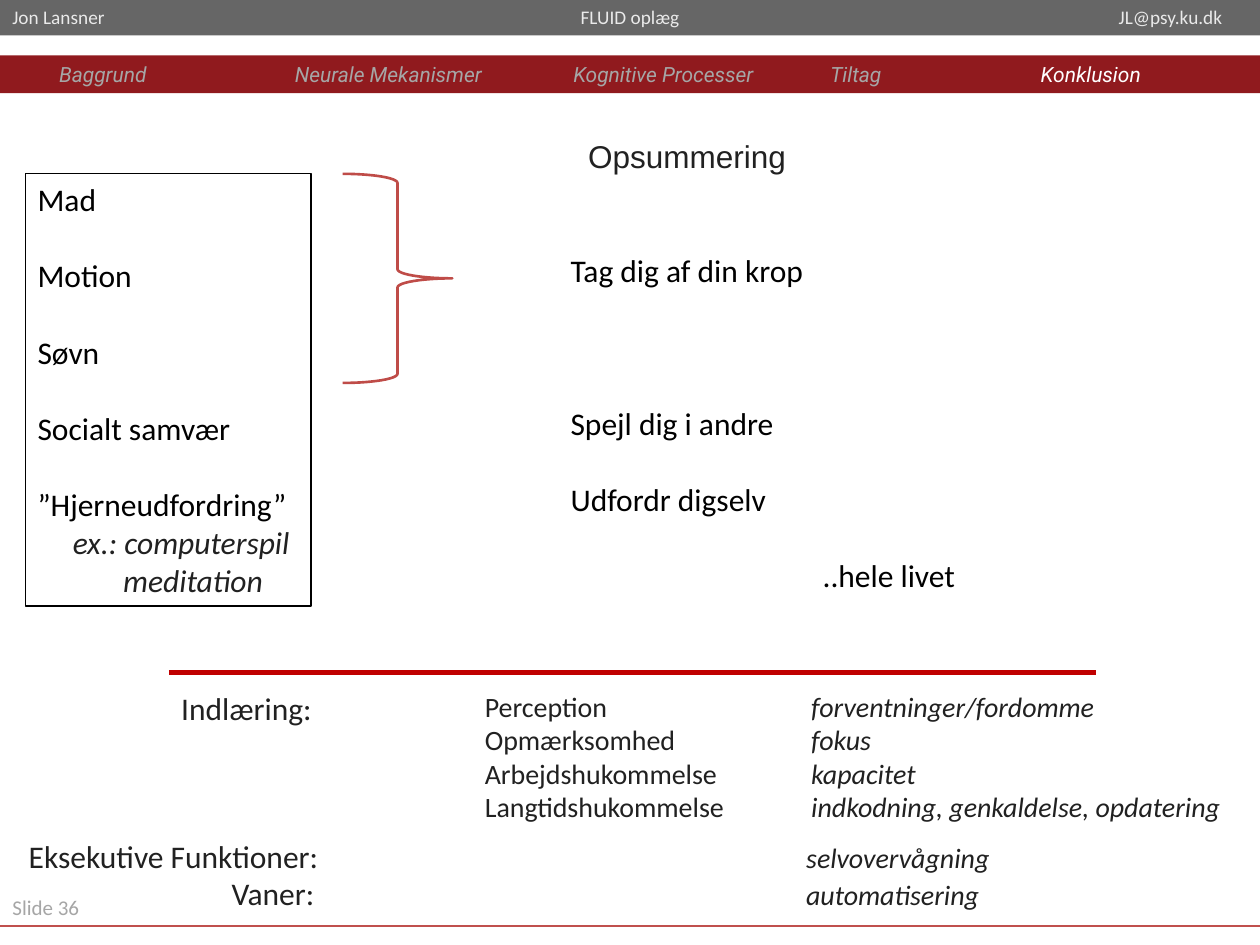
"""Build the summary slide of a lecture on learning and habits."""
from dataclasses import dataclass

from lxml.etree import SubElement
from pptx import Presentation
from pptx.dml.color import RGBColor
from pptx.enum.shapes import MSO_CONNECTOR, MSO_SHAPE
from pptx.enum.text import MSO_ANCHOR, PP_ALIGN
from pptx.oxml.ns import qn
from pptx.util import Inches, Pt

BLACK = RGBColor(0x00, 0x00, 0x00)
WHITE = RGBColor(0xFF, 0xFF, 0xFF)
INK = RGBColor(0x21, 0x21, 0x21)
HEADER_GRAY = RGBColor(0x66, 0x66, 0x66)
HEADER_TEXT = RGBColor(0xEA, 0xEA, 0xEA)
MUTED = RGBColor(0xA6, 0xA6, 0xA6)
NAVIGATION_RED = RGBColor(0x90, 0x1A, 0x1E)
FOOTER_RED = RGBColor(0xC0, 0x50, 0x4D)
DIVIDER_RED = RGBColor(0xC0, 0x00, 0x00)
BRACE_RED = RGBColor(0xBF, 0x4C, 0x48)
BLANK_LINE = 22


@dataclass
class Style:
    """Font settings shared by the paragraphs of a box."""
    size: int
    color: RGBColor = INK
    name: str = "Calibri"
    italic: bool = False


@dataclass
class Line:
    """One paragraph: its runs, indent, space before and tab stops."""
    runs: list
    indent: float = 0
    before: float = 0
    stops: tuple = ()
    style: Style = None


def apply_style(font, style):
    """Copy a style to a font."""
    font.size = Pt(style.size)
    font.name = style.name
    font.italic = style.italic
    font.color.rgb = style.color


def write_line(paragraph, line, style):
    """Fill a paragraph; a run is a text or a (text, style) pair."""
    paragraph.alignment = PP_ALIGN.LEFT
    properties = paragraph._p.get_or_add_pPr()
    if line.indent:
        properties.set("marL", str(Inches(line.indent)))
        properties.set("indent", "0")
    if line.stops:
        tabs = SubElement(properties, qn("a:tabLst"))
        for stop in line.stops:
            SubElement(tabs, qn("a:tab"), pos=str(Inches(stop)), algn="l")
    if line.before:
        paragraph.space_before = Pt(line.before)
    apply_style(paragraph.font, line.style or style)
    for item in line.runs:
        text, run_style = (item, None) if isinstance(item, str) else item
        run = paragraph.add_run()
        run.text = text
        if run_style:
            apply_style(run.font, run_style)


def write_lines(shape, lines, style, wrap=True):
    """Write lines into a shape; a plain string is a simple line."""
    frame = shape.text_frame
    frame.word_wrap = wrap
    for index, line in enumerate(lines):
        paragraph = frame.add_paragraph() if index else frame.paragraphs[0]
        write_line(paragraph, Line([line]) if isinstance(line, str) else line, style)


def add_text(slide, box, lines, style, wrap=True):
    """Add a text box."""
    shape = slide.shapes.add_textbox(*map(Inches, box))
    write_lines(shape, lines, style, wrap)


def add_outline(slide, kind, box, color, width):
    """Add an unfilled preset shape."""
    shape = slide.shapes.add_shape(kind, *map(Inches, box))
    shape.shadow.inherit = False
    shape.fill.background()
    shape.line.color.rgb = color
    shape.line.width = Pt(width)
    return shape


def add_bar(slide, top, height, fill, line, style, margin):
    """Add a full-width coloured bar with tabbed entries."""
    shape = slide.shapes.add_shape(
        MSO_SHAPE.RECTANGLE, 0, Inches(top), Inches(10), Inches(height))
    shape.shadow.inherit = False
    shape.fill.solid()
    shape.fill.fore_color.rgb = fill
    shape.line.fill.background()
    shape.text_frame.margin_left = Inches(margin)
    shape.text_frame.vertical_anchor = MSO_ANCHOR.MIDDLE
    write_lines(shape, [line], style)


def add_rule(slide, left, right, top, color, width):
    """Add a horizontal line."""
    rule = slide.shapes.add_connector(
        MSO_CONNECTOR.STRAIGHT, Inches(left), Inches(top), Inches(right), Inches(top))
    rule.line.color.rgb = color
    rule.line.width = Pt(width)
    SubElement(rule._element.spPr, qn("a:effectLst"))


def add_frame(slide):
    """Add the header, the section bar and the footer."""
    header = Line(["Jon Lansner\tFLUID oplæg\tJL@psy.ku.dk"], stops=(4.51, 8.78))
    add_bar(slide, -0.01, 0.29, HEADER_GRAY, header, Style(11, HEADER_TEXT), 0.1)
    add_rule(slide, 0, 10, 7.35, FOOTER_RED, 1)
    add_text(slide, (0, 7.05, 2.99, 0.3), ["Slide 36"], Style(12, MUTED))
    sections = Line(
        ["Baggrund\tNeurale Mekanismer\tKognitive Processer\tTiltag\t",
         ("Konklusion", Style(12, WHITE, "Roboto", True))],
        stops=(1.87, 4.08, 6.12, 7.79))
    add_bar(slide, 0.44, 0.3, NAVIGATION_RED, sections,
            Style(12, MUTED, "Roboto", True), 0.47)


def add_advice(slide):
    """Add the habits, their brace and the matching advice."""
    body, example = Style(18, BLACK), Style(18, italic=True)
    add_text(slide, (4.57, 1.04, 5, 0.4), ["Opsummering"], Style(18, name="Arial"))
    habits = ["Motion", "Søvn", "Socialt samvær", "”Hjerneudfordring”"]
    box = add_outline(slide, MSO_SHAPE.RECTANGLE, (0.2, 1.38, 2.27, 3.43), BLACK, 0.75)
    box.text_frame.vertical_anchor = MSO_ANCHOR.TOP
    write_lines(box, [
        "Mad",
        *[Line([habit], before=BLANK_LINE) for habit in habits],
        Line(["ex.: computerspil"], indent=0.28, style=example),
        Line(["meditation"], indent=0.68, style=example),
    ], body)
    add_outline(slide, MSO_SHAPE.RIGHT_BRACE, (2.72, 1.38, 0.87, 1.66), BRACE_RED, 1.5)
    add_text(slide, (4.43, 1.94, 3.29, 2.83), [
        "Tag dig af din krop",
        Line(["Spejl dig i andre"], before=3 * BLANK_LINE),
        Line(["Udfordr digselv"], before=BLANK_LINE),
        Line(["..hele livet"], indent=2, before=BLANK_LINE),
    ], body)


def add_learning(slide):
    """Add the overview of learning, executive functions and habits."""
    heading, detail = Style(18), Style(16, italic=True)
    add_rule(slide, 1.34, 8.7, 5.34, DIVIDER_RED, 3)
    add_text(slide, (1.34, 5.42, 2.3, 0.4), ["Indlæring:"], heading)
    add_text(slide, (3.75, 5.42, 2.76, 1.18),
             ["Perception", "Opmærksomhed", "Arbejdshukommelse", "Langtidshukommelse"],
             Style(16))
    add_text(slide, (6.34, 5.42, 3.66, 1.18),
             ["forventninger/fordomme", "fokus", "kapacitet",
              "indkodning, genkaldelse, opdatering"], detail)
    add_text(slide, (0.13, 6.59, 9.8, 0.71), [
        Line(["Eksekutive Funktioner:\t", ("selvovervågning", detail)], stops=(6.17,)),
        Line(["\tVaner:\t", ("automatisering", detail)], stops=(1.61, 6.17)),
    ], heading)


def main():
    """Create and save the presentation."""
    presentation = Presentation()
    presentation.slide_width = Inches(10)
    presentation.slide_height = Inches(7.5)
    slide = presentation.slides.add_slide(presentation.slide_layouts[6])
    add_frame(slide)
    add_advice(slide)
    add_learning(slide)
    presentation.save("out.pptx")


if __name__ == "__main__":
    main()
